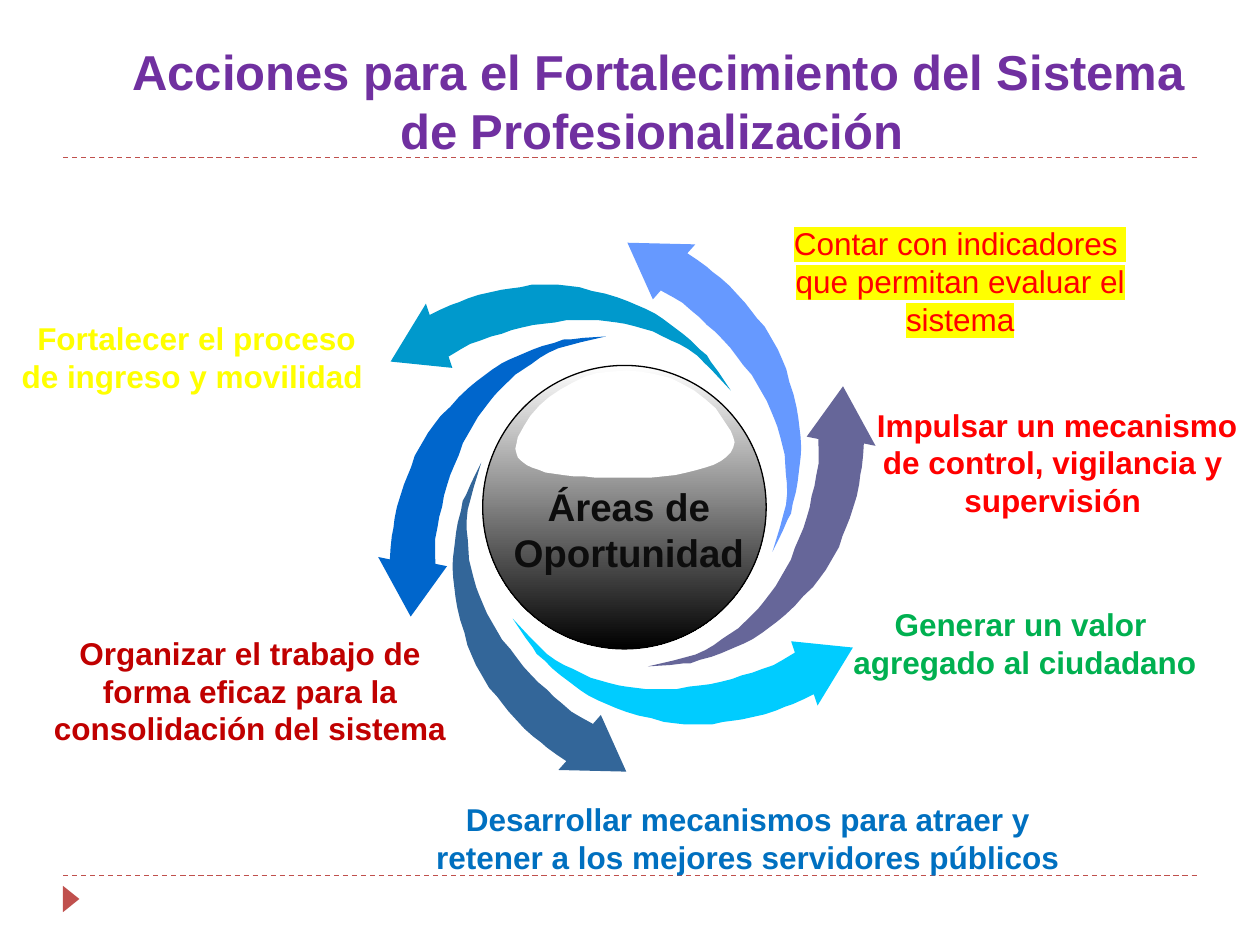
from lxml.etree import SubElement
from pptx import Presentation
from pptx.dml.color import RGBColor
from pptx.enum.dml import MSO_LINE
from pptx.enum.shapes import MSO_CONNECTOR, MSO_SHAPE
from pptx.enum.text import MSO_AUTO_SIZE, PP_ALIGN
from pptx.oxml.ns import qn
from pptx.util import Pt

COLORS = {
    "accent": "C0504D", "purple": "7030A0", "white": "FFFFFF", "black": "000000",
    "ink": "0D0D0D", "green": "00B050", "red": "FF0000", "dark_red": "C00000",
    "blue": "0070C0", "yellow": "FFFF00",
    "arrow_cyan": "00CCFF", "arrow_steel": "336699", "arrow_royal": "0066CC",
    "arrow_teal": "0099CC", "arrow_sky": "6699FF", "arrow_violet": "666699",
}

# Outlines use hundredths of an inch, measured from their top left corner.
OUTLINE_UNIT = Pt(0.72)
ARROW_OUTLINE = [
    (224, 27), (221, 18), (270, 23), (242, 69), (239, 60), (231, 64), (222, 68),
    (216, 70), (209, 73), (200, 76), (191, 78), (182, 80), (175, 81), (167, 82),
    (158, 84), (152, 84), (144, 84), (137, 84), (128, 83), (120, 82), (110, 79),
    (100, 77), (90, 74), (82, 71), (75, 68), (68, 65), (60, 61), (54, 57),
    (46, 51), (38, 45), (32, 40), (25, 33), (19, 28), (16, 23), (10, 15), (0, 0),
    (14, 15), (21, 22), (27, 28), (34, 33), (41, 37), (48, 40), (56, 44),
    (62, 47), (69, 49), (76, 51), (84, 53), (90, 54), (98, 55), (106, 56),
    (113, 56), (120, 56), (130, 56), (140, 54), (149, 53), (157, 52), (166, 50),
    (174, 48), (182, 45), (190, 43), (198, 40), (207, 37), (214, 33),
]
GLOSS_OUTLINE = [
    (171, 48), (173, 53), (174, 57), (173, 61), (171, 65), (167, 69), (163, 72),
    (157, 75), (151, 77), (144, 79), (136, 81), (127, 83), (118, 84), (108, 85),
    (105, 85), (63, 85), (54, 84), (46, 84), (38, 83), (31, 82), (24, 81),
    (19, 79), (13, 77), (9, 75), (5, 72), (2, 69), (1, 66), (0, 62), (1, 58),
    (2, 53), (7, 44), (12, 36), (19, 28), (27, 21), (36, 15), (45, 10), (55, 5),
    (65, 2), (76, 1), (88, 0), (100, 1), (111, 3), (123, 6), (133, 11), (142, 16),
    (151, 23), (159, 30), (165, 39),
]

# Each arrow turns 60 degrees further than the one before: left, top, colour.
ARROWS = [
    (293, 353.5, "arrow_cyan"), (200.2, 333.4, "arrow_steel"),
    (174.2, 231.1, "arrow_royal"), (223.2, 162.7, "arrow_teal"),
    (321.8, 185.8, "arrow_sky"), (347.8, 281.5, "arrow_violet"),
]

# Lines, (left, top, width, height), colour.
ACTIONS = [
    (["Generar un valor ", "agregado al ciudadano"],
     (479.5, 342, 212.4, 51), "green"),
    (["Impulsar un mecanismo ", "de control, vigilancia y ", "supervisión "],
     (493.9, 228.2, 220.3, 72.7), "red"),
    (["Organizar el trabajo de forma eficaz para la consolidación del sistema"],
     (14.4, 358.6, 257, 72.7), "dark_red"),
    (["Desarrollar mecanismos para atraer y retener a los mejores servidores públicos"],
     (234, 453.6, 386.6, 51), "blue"),
    (["Fortalecer el proceso de ingreso y movilidad "],
     (2.2, 178.6, 220.3, 51), "yellow"),
]


def rgb(name):
    return RGBColor.from_string(COLORS[name])


def paint(shape, color):
    """Plain fill without outline or shadow."""
    shape.shadow.inherit = False
    shape.fill.solid()
    shape.fill.fore_color.rgb = rgb(color)
    shape.line.fill.background()


def add_dashed_rule(page, top):
    rule = page.shapes.add_connector(
        MSO_CONNECTOR.STRAIGHT, Pt(36), Pt(top), Pt(684), Pt(top))
    rule.line.color.rgb = rgb("accent")
    rule.line.width = Pt(0.75)
    rule.line.dash_style = MSO_LINE.DASH
    SubElement(rule.element.spPr, qn("a:effectLst"))


def add_marker(page):
    marker = page.shapes.add_shape(
        MSO_SHAPE.ISOSCELES_TRIANGLE, Pt(33.1), Pt(509), Pt(15.1), Pt(9.4))
    marker.rotation = 90
    paint(marker, "accent")


def add_outline(page, outline, left, top, color, rotation=0):
    builder = page.shapes.build_freeform(*outline[0], scale=OUTLINE_UNIT)
    builder.add_line_segments(outline[1:], close=True)
    shape = builder.convert_to_shape(Pt(left), Pt(top))
    shape.rotation = rotation
    paint(shape, color)


def add_sphere(page):
    sphere = page.shapes.add_shape(
        MSO_SHAPE.OVAL, Pt(275.8), Pt(208.8), Pt(162), Pt(162))
    sphere.shadow.inherit = False
    sphere.fill.gradient()
    sphere.fill.gradient_angle = 270
    for stop, position, color in zip(
            sphere.fill.gradient_stops, (0, 1), ("white", "black")):
        stop.position = position
        stop.color.rgb = rgb(color)
    sphere.line.color.rgb = rgb("black")
    sphere.line.width = Pt(0.75)


def highlight(span, color):
    mark = SubElement(span.font.fill._xPr, qn("a:highlight"))
    SubElement(mark, qn("a:srgbClr")).set("val", COLORS[color])
    span.font.fill._xPr.find(qn("a:solidFill")).addnext(mark)


def add_text(page, lines, bounds, color, size=18, bold=True, marker_color=None):
    box = page.shapes.add_textbox(*(Pt(length) for length in bounds))
    frame = box.text_frame
    frame.word_wrap = True
    frame.auto_size = MSO_AUTO_SIZE.SHAPE_TO_FIT_TEXT
    frame.text = "\n".join(lines)
    for para in frame.paragraphs:
        para.alignment = PP_ALIGN.CENTER
        for span in para.runs:
            span.font.name = "Arial"
            span.font.size = Pt(size)
            span.font.bold = bold
            span.font.color.rgb = rgb(color)
            if marker_color:
                highlight(span, marker_color)


def main():
    deck = Presentation()
    deck.slide_width, deck.slide_height = Pt(720), Pt(540)
    page = deck.slides.add_slide(deck.slide_layouts[6])

    for top in (500.4, 90):
        add_dashed_rule(page, top)
    add_marker(page)

    for index, (left, top, color) in enumerate(ARROWS):
        add_outline(page, ARROW_OUTLINE, left, top, color, rotation=60 * index)
    add_sphere(page)
    add_outline(page, GLOSS_OUTLINE, 294.5, 211.7, "white")

    for lines, bounds, color in ACTIONS:
        add_text(page, lines, bounds, color)
    add_text(page, ["Contar con indicadores ", "que permitan evaluar el sistema"],
             (419.8, 124.6, 257.8, 72.7), "red", bold=False, marker_color="yellow")
    add_text(page, ["Áreas de Oportunidad"], (284.4, 272.2, 149.8, 60.5), "ink", size=22)
    add_text(page, ["Acciones para el Fortalecimiento del Sistema de Profesionalización "],
             (59.8, 20.2, 632.9, 74.9), "purple", size=28)

    deck.save("out.pptx")


if __name__ == "__main__":
    main()
